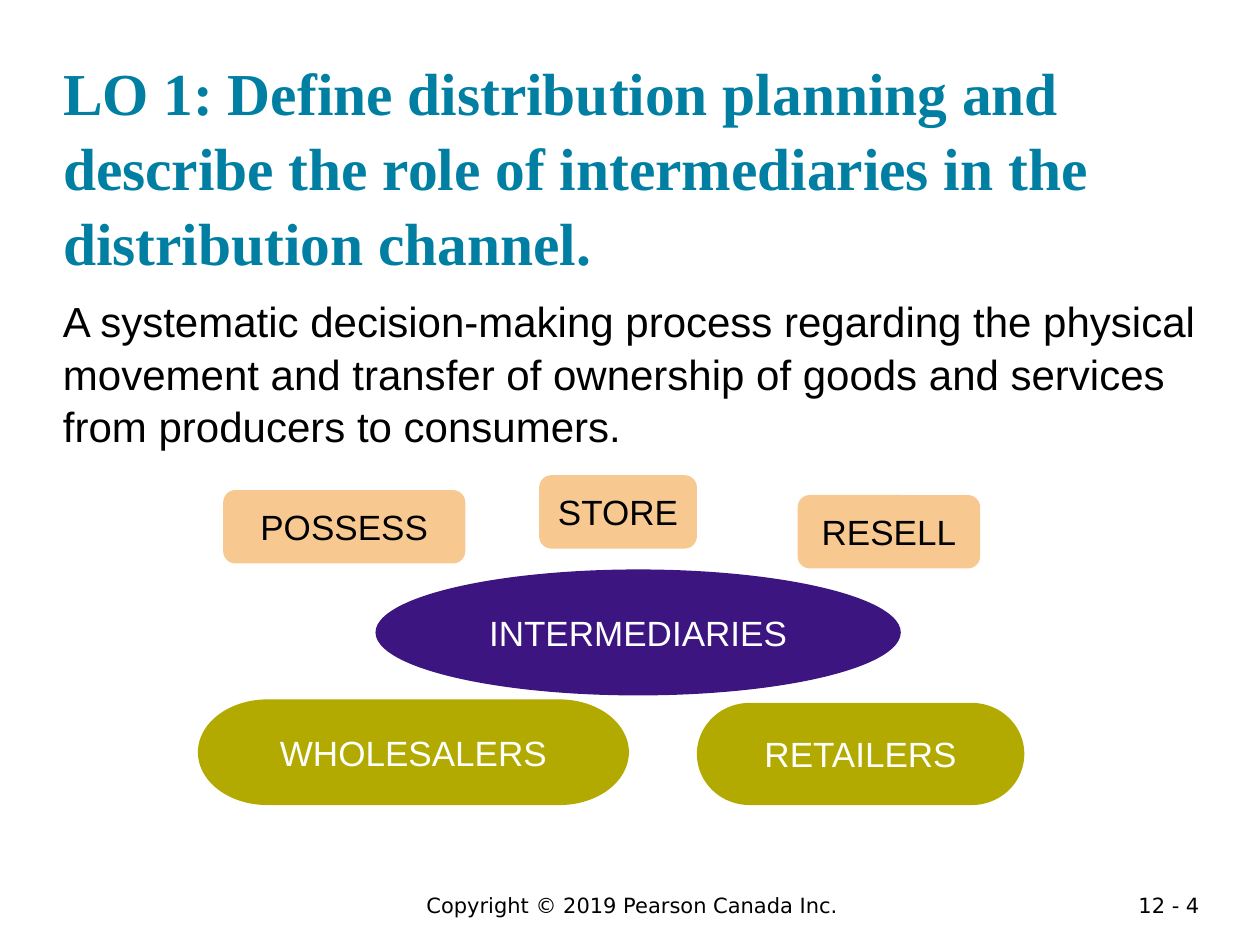
from pptx import Presentation
from pptx.dml.color import RGBColor
from pptx.enum.shapes import MSO_SHAPE as Shape
from pptx.enum.text import MSO_ANCHOR as Anchor, MSO_AUTO_SIZE as AutoSize, PP_ALIGN as Align
from pptx.util import Cm, Pt

COLORS = {
    "title": "007FA3",
    "text": "000000",
    "light_text": "FFFFFF",
    "intermediary": "3C1581",
    "function": "F8C891",
    "channel": "B2AA00",
}

FUNCTIONS = [
    ("POSSESS", 4.5, 9.88, 4.88),
    ("STORE", 10.87, 9.58, 3.18),
    ("RESELL", 16.08, 9.98, 3.68),
]

CHANNELS = [
    ("WHOLESALERS", 3.99, 14.1, 8.69, 2.13),
    ("RETAILERS", 14.05, 14.17, 6.6, 2.06),
]


def write_text(shape, text, size, color, font="Arial", align=Align.LEFT, bold=False):
    frame = shape.text_frame
    frame.word_wrap = True
    frame.text = text
    paragraph = frame.paragraphs[0]
    paragraph.alignment = align
    paragraph.font.name = font
    paragraph.font.size = Pt(size)
    paragraph.font.bold = bold
    paragraph.font.color.rgb = RGBColor.from_string(COLORS[color])
    return paragraph


def remove_margins(frame):
    frame.margin_left = frame.margin_top = frame.margin_right = frame.margin_bottom = 0


def set_title(slide, text):
    title = slide.shapes.title
    title.left, title.top, title.width, title.height = Cm(1.27), Cm(2.54), Cm(22.86), Cm(3.05)
    paragraph = write_text(title, text, 34, "title", "Times New Roman", bold=True)
    paragraph.line_spacing = 1.05
    frame = title.text_frame
    frame.auto_size = AutoSize.NONE
    frame.vertical_anchor = Anchor.BOTTOM
    remove_margins(frame)


def add_body(slide, text):
    body = slide.shapes.add_textbox(Cm(1.27), Cm(5.92), Cm(22.86), Cm(11.1))
    paragraph = write_text(body, text, 24, "text")
    paragraph.line_spacing = 1.04
    remove_margins(body.text_frame)


def add_footer(slide, text, left, width, align):
    footer = slide.shapes.add_textbox(Cm(left), Cm(17.86), Cm(width), Cm(0.76))
    write_text(footer, text, 12, "text", "DejaVu Sans", align)


def add_node(slide, kind, text, left, top, width, height, fill, color):
    node = slide.shapes.add_shape(kind, Cm(left), Cm(top), Cm(width), Cm(height))
    node.shadow.inherit = False
    node.fill.solid()
    node.fill.fore_color.rgb = RGBColor.from_string(COLORS[fill])
    node.line.fill.background()
    node.text_frame.vertical_anchor = Anchor.MIDDLE
    write_text(node, text, 20, color, align=Align.CENTER)


def main():
    presentation = Presentation()
    presentation.slide_width, presentation.slide_height = Cm(25.4), Cm(19.05)
    slide = presentation.slides.add_slide(presentation.slide_layouts[5])

    set_title(slide, "LO 1: Define distribution planning and describe the role of "
                     "intermediaries in the distribution channel.")
    add_body(slide, "A systematic decision-making process regarding the physical movement and "
                    "transfer of ownership of goods and services from producers to consumers.")

    add_node(slide, Shape.OVAL, "INTERMEDIARIES", 7.57, 11.48, 10.59, 2.54,
             "intermediary", "light_text")
    for text, left, top, width in FUNCTIONS:
        add_node(slide, Shape.ROUNDED_RECTANGLE, text, left, top, width, 1.48,
                 "function", "text")
    for text, left, top, width, height in CHANNELS:
        add_node(slide, Shape.FLOWCHART_TERMINATOR, text, left, top, width, height,
                 "channel", "light_text")

    add_footer(slide, "Copyright © 2019 Pearson Canada Inc.", 4.17, 17.15, Align.CENTER)
    add_footer(slide, "12 - 4", 21.89, 2.54, Align.RIGHT)
    presentation.save("out.pptx")


if __name__ == "__main__":
    main()
